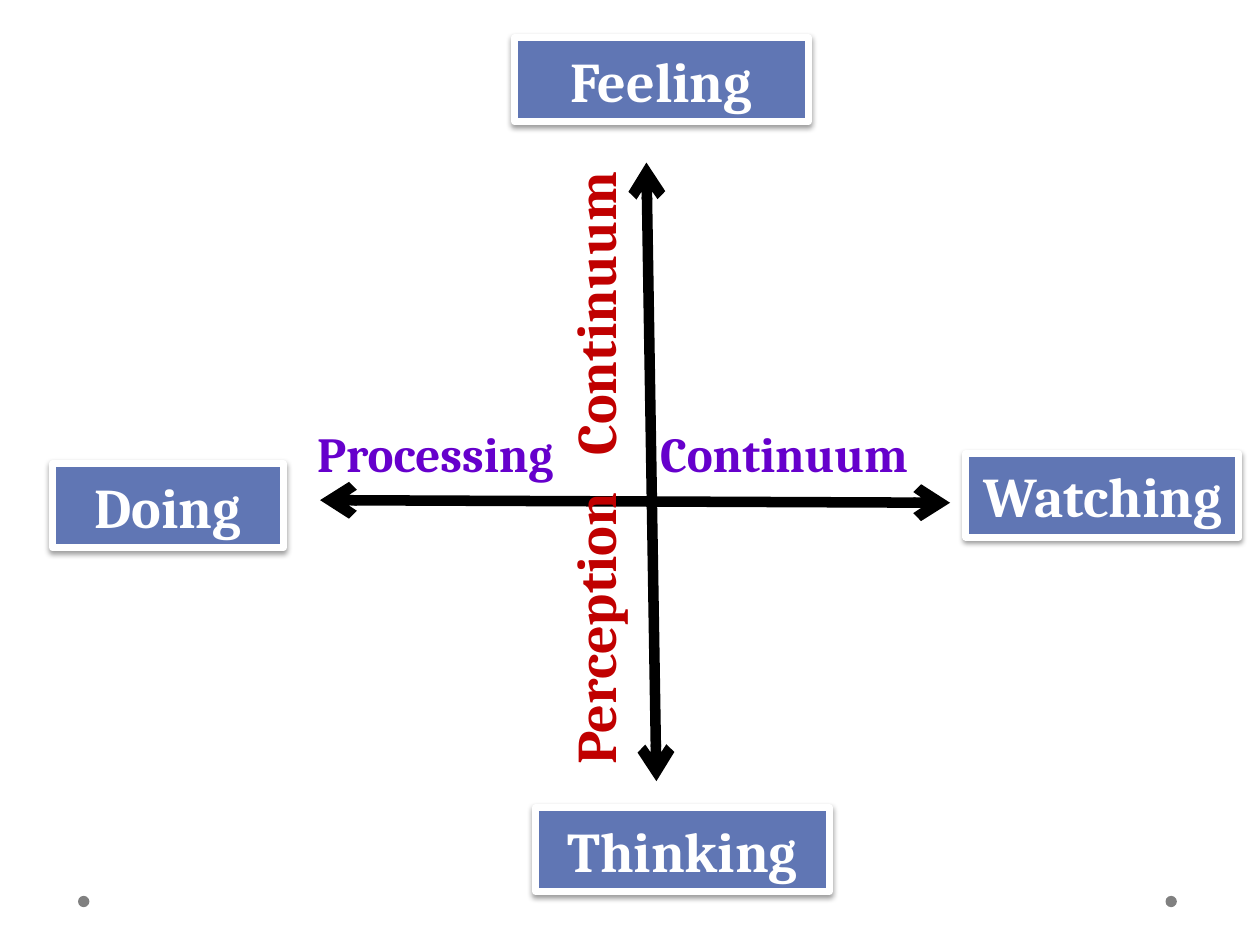
from lxml.etree import SubElement
from pptx import Presentation
from pptx.dml.color import RGBColor
from pptx.enum.shapes import MSO_CONNECTOR, MSO_SHAPE
from pptx.enum.text import MSO_ANCHOR, MSO_AUTO_SIZE, PP_ALIGN
from pptx.oxml.ns import qn
from pptx.util import Pt

BLUE = RGBColor(0x60, 0x76, 0xB4)
WHITE = RGBColor(0xFF, 0xFF, 0xFF)
BLACK = RGBColor(0, 0, 0)
RED = RGBColor(0xC0, 0, 0)
PURPLE = RGBColor(0x66, 0, 0xCC)
GRAY = RGBColor(0x80, 0x80, 0x80)

POLE_HEIGHT = 48
POLES = [
    ("Feeling", 294, 21.6, 168),
    ("Thinking", 306, 461.5, 168),
    ("Doing", 30, 265, 132),
    ("Watching", 552, 259, 156),
]
AXES = [(369.4, 92.9, 375.1, 446.4), (182.9, 285.8, 542.9, 287.3)]
AXIS_LABELS = [
    ("Perception\tContinuum", (316.8, 66.2, 53.3, 378), 32, RED, 177, "vert270"),
    ("Processing\tContinuum", (174.2, 238.3, 378, 41.2), 28, PURPLE, 196, "horz"),
]
DOT_LEFTS = [666, 44.6]
DOT_TOP, DOT_SIZE = 511.9, 6.5


def add_child(parent, tag, **attrs):
    return SubElement(parent, qn(tag), {k: str(v) for k, v in attrs.items()})


def write(tf, text, size=32, color=WHITE, align=PP_ALIGN.LEFT, tab=None):
    p = tf.paragraphs[0]
    p.alignment = align
    if tab:
        tabs = add_child(p._p.get_or_add_pPr(), "a:tabLst")
        add_child(tabs, "a:tab", pos=int(Pt(tab)), algn="l")
    r = p.add_run()
    r.text = text
    r.font.name = "Cambria"
    r.font.size = Pt(size)
    r.font.bold = True
    r.font.color.rgb = color


def add_filled(s, kind, box, color):
    sp = s.shapes.add_shape(kind, *map(Pt, box))
    sp.shadow.inherit = False
    sp.fill.solid()
    sp.fill.fore_color.rgb = color
    sp.line.fill.background()
    return sp


def add_axis(s, ends):
    axis = s.shapes.add_connector(MSO_CONNECTOR.STRAIGHT, *map(Pt, ends))
    axis.line.color.rgb = BLACK
    axis.line.width = Pt(6)
    ln = axis.line._get_or_add_ln()
    add_child(ln, "a:headEnd", type="arrow")
    add_child(ln, "a:tailEnd", type="arrow")
    add_child(axis._element.spPr, "a:effectLst")


def add_axis_label(s, text, box, size, color, tab, direction):
    tf = s.shapes.add_textbox(*map(Pt, box)).text_frame
    tf.word_wrap = True
    tf.auto_size = MSO_AUTO_SIZE.SHAPE_TO_FIT_TEXT
    tf._txBody.bodyPr.set("vert", direction)
    write(tf, text, size=size, color=color, tab=tab)


def add_pole(s, text, left, top, width):
    sp = add_filled(s, MSO_SHAPE.RECTANGLE, (left, top, width, POLE_HEIGHT), BLUE)
    sp.line.color.rgb = WHITE
    sp.line.width = Pt(4)
    effects = sp._element.spPr.find(qn("a:effectLst"))
    shadow = add_child(effects, "a:outerShdw", blurRad=int(Pt(3.1)),
                       dist=int(Pt(1.6)), dir=90 * 60000, rotWithShape=0)
    add_child(add_child(shadow, "a:srgbClr", val=BLACK), "a:alpha", val=38000)
    sp.text_frame.vertical_anchor = MSO_ANCHOR.MIDDLE
    sp.text_frame.word_wrap = True
    write(sp.text_frame, text, align=PP_ALIGN.CENTER)


def main():
    prs = Presentation()
    prs.slide_width, prs.slide_height = Pt(720), Pt(540)
    s = prs.slides.add_slide(prs.slide_layouts[6])
    for left in DOT_LEFTS:
        add_filled(s, MSO_SHAPE.OVAL, (left, DOT_TOP, DOT_SIZE, DOT_SIZE), GRAY)
    for ends in AXES:
        add_axis(s, ends)
    for label in AXIS_LABELS:
        add_axis_label(s, *label)
    for pole in POLES:
        add_pole(s, *pole)
    prs.save("out.pptx")


if __name__ == "__main__":
    main()
